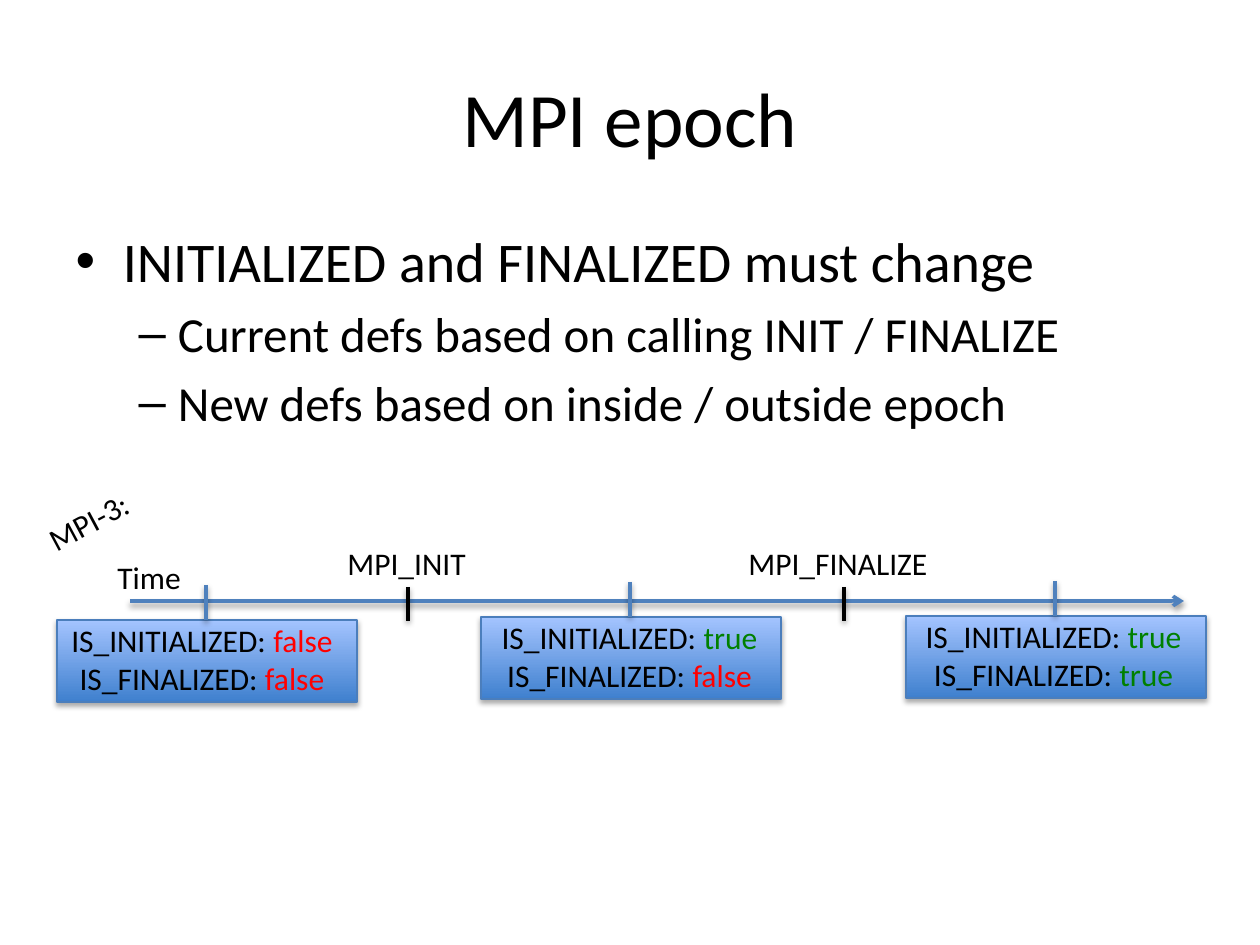
from lxml import etree
from pptx import Presentation
from pptx.dml.color import RGBColor
from pptx.enum.shapes import MSO_CONNECTOR, MSO_SHAPE
from pptx.enum.text import MSO_ANCHOR, MSO_AUTO_SIZE, PP_ALIGN
from pptx.oxml import parse_xml
from pptx.oxml.ns import nsdecls, qn
from pptx.util import Emu, Pt

STRAIGHT = MSO_CONNECTOR.STRAIGHT
RECT = MSO_SHAPE.RECTANGLE
MIDDLE = MSO_ANCHOR.MIDDLE
FIT = MSO_AUTO_SIZE.SHAPE_TO_FIT_TEXT
CENTER = PP_ALIGN.CENTER

BLACK = RGBColor(0x00, 0x00, 0x00)
BLUE = RGBColor(0x4F, 0x81, 0xBD)
EDGE = RGBColor(0x4B, 0x7E, 0xBC)
DEEP = RGBColor(0x3F, 0x80, 0xCE)
PALE = RGBColor(0xA4, 0xC4, 0xFF)
VALUE_COLORS = {"true": RGBColor(0x00, 0x80, 0x00),
                "false": RGBColor(0xFF, 0x00, 0x00)}

FONT = "Calibri"
PX = 914400 / 126


def add_shadow(shape, dist, alpha):
    shape._element.spPr.append(parse_xml(
        f'<a:effectLst {nsdecls("a")}>'
        f'<a:outerShdw blurRad="40000" dist="{dist}" dir="5400000" rotWithShape="0">'
        f'<a:srgbClr val="000000"><a:alpha val="{alpha}"/></a:srgbClr>'
        '</a:outerShdw></a:effectLst>'))


def add_line(shapes, x1, y1, x2, y2, color):
    c = shapes.add_connector(STRAIGHT, *[Emu(round(v * PX)) for v in (x1, y1, x2, y2)])
    c.line.color.rgb = color
    c.line.width = Pt(2)
    add_shadow(c, 20000, 38000)
    return c


prs = Presentation()
prs.slide_width, prs.slide_height = Emu(round(1260 * PX)), Emu(round(945 * PX))
s = prs.slides.add_slide(prs.slide_layouts[1])

# Title and list
title, body = s.shapes.title, s.placeholders[1]
for sp, box in ((title, (63, 38, 1134, 158)), (body, (63, 220, 1134, 624))):
    sp.left, sp.top, sp.width, sp.height = [Emu(round(v * PX)) for v in box]
title.text_frame.text = "MPI epoch"
title.text_frame.vertical_anchor = MIDDLE
p = title.text_frame.paragraphs[0]
p.alignment = CENTER
p.font.size, p.font.name, p.font.color.rgb = Pt(44), FONT, BLACK

bullets = [
    ("INITIALIZED and FINALIZED must change", 0, 32),
    ("Current defs based on calling INIT / FINALIZE", 1, 28),
    ("New defs based on inside / outside epoch", 1, 28),
]
tf = body.text_frame
tf.text = "\n".join(text for text, _, _ in bullets)
for p, (_, level, size) in zip(tf.paragraphs, bullets):
    p.level = level
    p.font.size, p.font.name, p.font.color.rgb = Pt(size), FONT, BLACK

# Time axis with the two call marks
axis = add_line(s.shapes, 130, 601, 1184, 601, BLUE)
etree.SubElement(axis.line._get_or_add_ln(), qn("a:tailEnd"), type="arrow")
for x in (408, 844):
    add_line(s.shapes, x, 587, x, 621, BLACK)

# Labels
for text, x, y, w, angle in (
    ("MPI_INIT", 335, 538, 146, 0),
    ("MPI_FINALIZE", 736, 538, 207, 0),
    ("MPI-3:", 33, 496, 111, 331.7),
    ("Time", 105, 552, 89, 0),
):
    sp = s.shapes.add_textbox(*[Emu(round(v * PX)) for v in (x, y, w, 50)])
    sp.rotation = angle
    tf = sp.text_frame
    tf.word_wrap, tf.auto_size = False, FIT
    tf.text = text
    p = tf.paragraphs[0]
    p.font.size, p.font.name, p.font.color.rgb = Pt(18), FONT, BLACK

# State boxes: position, text inset and width, then the two flag values
for x, y, inset, text_w, values in (
    (57, 620, 0, 290, ("false", "false")),
    (481, 617, 7, 283, ("true", "false")),
    (906, 616, 6, 283, ("true", "true")),
):
    group = s.shapes.add_group_shape()
    sp = group.shapes.add_shape(RECT, *[Emu(round(v * PX)) for v in (x, y, 300, 82)])
    sp.fill.gradient()
    sp.fill.gradient_angle = 90
    for stop, color, position in zip(sp.fill.gradient_stops, (DEEP, PALE), (0, 1)):
        stop.color.rgb, stop.position = color, position
    sp.line.color.rgb, sp.line.width = EDGE, Pt(0.75)
    add_shadow(sp, 23000, 35000)

    sp = group.shapes.add_textbox(
        *[Emu(round(v * PX)) for v in (x + inset, y - 5, text_w, 89)])
    tf = sp.text_frame
    tf.word_wrap, tf.auto_size = False, FIT
    tf.text = "IS_INITIALIZED: \nIS_FINALIZED: "
    for p, value in zip(tf.paragraphs, values):
        p.alignment = CENTER
        p.font.size, p.font.name, p.font.color.rgb = Pt(18), FONT, BLACK
        r = p.add_run()
        r.text = value
        r.font.color.rgb = VALUE_COLORS[value]
        r.font.size, r.font.name = Pt(18), FONT

    add_line(group.shapes, x + 149, y - 35, x + 149, y, BLUE)

prs.save("out.pptx")
